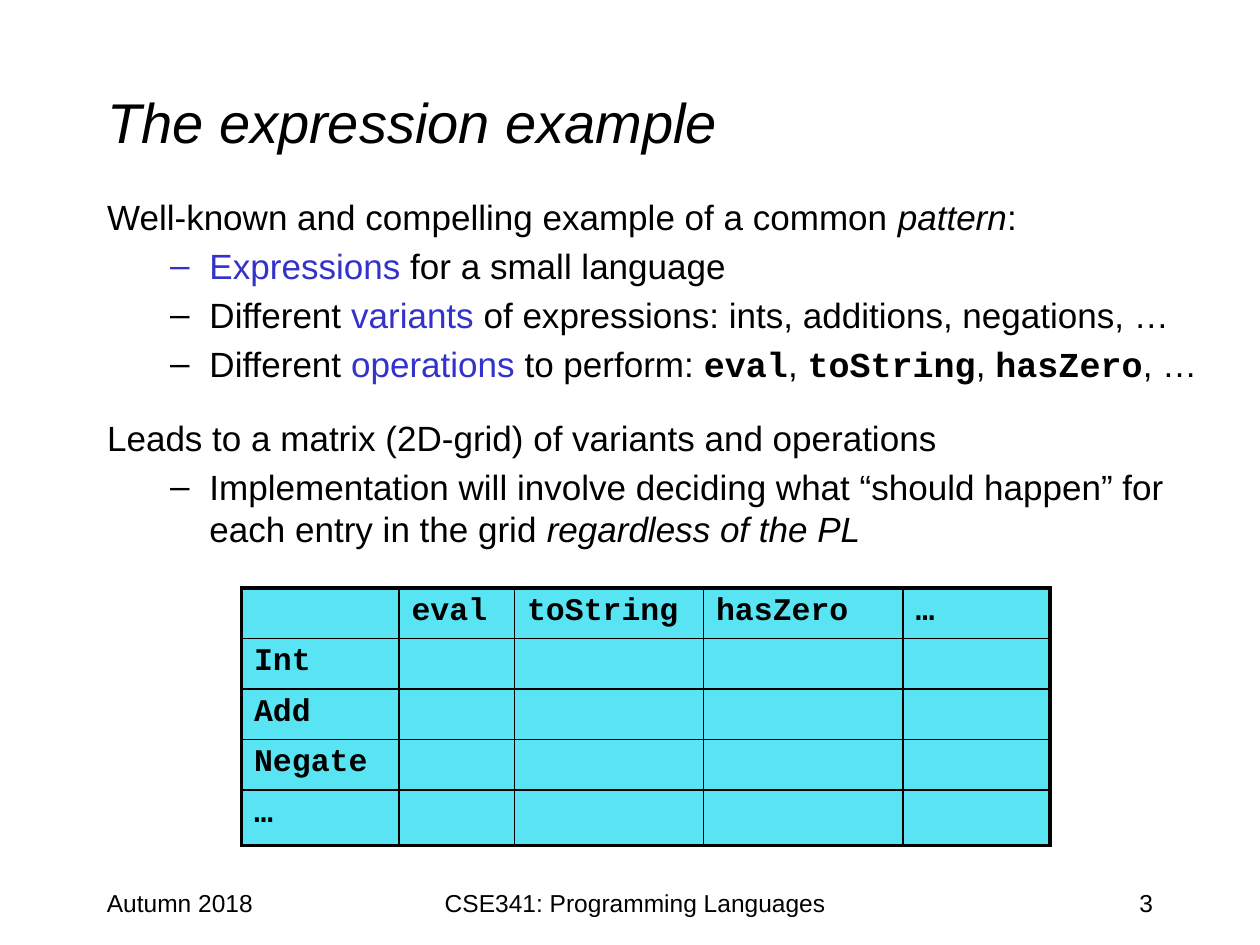
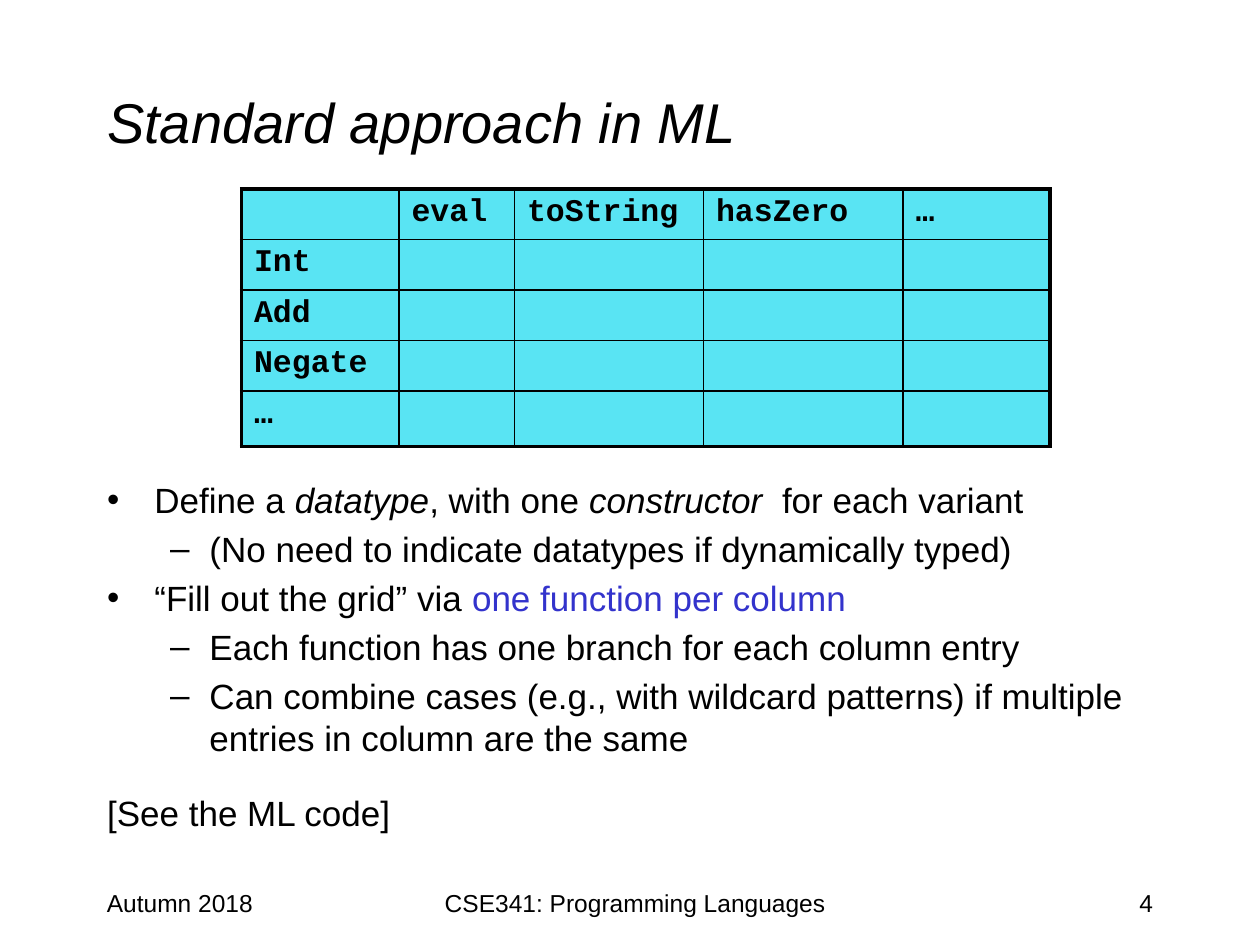
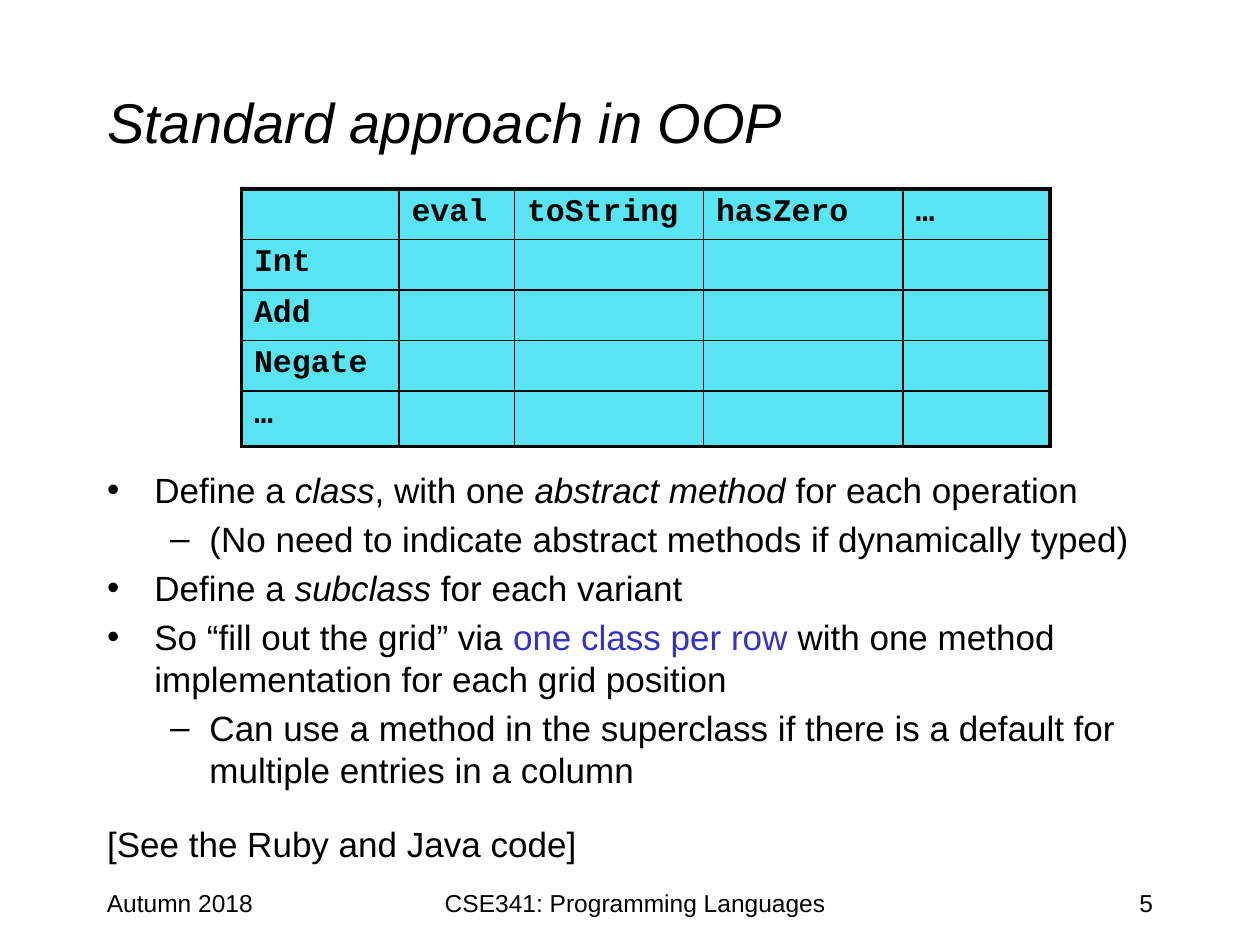
import pptx
import pptx.dml.color
import pptx.enum.text
import pptx.oxml.ns
import pptx.util
from lxml import etree

# Shared look
BLACK, BLUE, CYAN, WHITE = "000000", "3333CC", "59E4F3", "FFFFFF"
SANS, MONO = "Arial", "Courier New"
ALIGN = pptx.enum.text.PP_ALIGN
UNIT = pptx.util.Inches(10) // 120  # the slide is a grid of 120 by 90 units

# Run styles
PLAIN = {}
ITALIC = {"italic": True}
KEY = {"color": BLUE}
CODE = {"name": MONO, "bold": True}

# Paragraph kinds: (outline level, has bullet, space before in points)
LEAD = (0, False, None)
LEAD_AFTER_GAP = (0, False, 18.5)
POINT = (0, True, None)
DETAIL = (1, True, None)

# Matrix of variants and operations
OPERATIONS = ["eval", "toString", "hasZero", "…"]
VARIANTS = ["Int", "Add", "Negate", "…"]
MATRIX_COLUMNS = [15, 11, 18, 19, 14]
MATRIX_ROWS = [4.62] * 4 + [5.3]


def grid(*cells):
    return [round(cell * UNIT) for cell in cells]


def rgb(code):
    return pptx.dml.color.RGBColor.from_string(code)


def style_font(font, size=None, name=None, color=None, bold=None, italic=None):
    if size:
        font.size = pptx.util.Pt(size)
    if name:
        font.name = name
    if color:
        font.color.rgb = rgb(color)
    if bold is not None:
        font.bold = bold
    if italic is not None:
        font.italic = italic


def place(shape, box):
    shape.left, shape.top, shape.width, shape.height = grid(*box)


def add_title(slide, text):
    title = slide.shapes.title
    place(title, (9, 4, 102, 15))
    title.text_frame.text = text
    heading = title.text_frame.paragraphs[0]
    heading.alignment = ALIGN.LEFT
    style_font(heading.font, 32, SANS, BLACK, italic=True)


def add_body(slide, box, paragraphs):
    body = slide.placeholders[1]
    place(body, box)
    frame = body.text_frame
    frame.auto_size = pptx.enum.text.MSO_AUTO_SIZE.NONE
    for index, ((level, bullet, gap), *runs) in enumerate(paragraphs):
        paragraph = frame.add_paragraph() if index else frame.paragraphs[0]
        paragraph.level = level
        if gap:
            paragraph.space_before = pptx.util.Pt(gap)
        if not bullet:
            properties = paragraph._p.get_or_add_pPr()
            properties.set("marL", "0")
            properties.set("indent", "0")
            etree.SubElement(properties, pptx.oxml.ns.qn("a:buNone"))
        style_font(paragraph.font, 20, SANS, BLACK)
        for text, style in runs:
            run = paragraph.add_run()
            run.text = text
            style_font(run.font, **style)


def add_footer(slide, number):
    for text, left, width, alignment in (
        ("Autumn 2018", 9, 25, ALIGN.LEFT),
        ("CSE341: Programming Languages", 38, 45, ALIGN.CENTER),
        (str(number), 86, 25, ALIGN.RIGHT),
    ):
        footer = slide.shapes.add_textbox(*grid(left, 84, width, 6)).text_frame
        footer.word_wrap = True
        footer.text = text
        footer.paragraphs[0].alignment = alignment
        style_font(footer.paragraphs[0].font, 14, SANS, BLACK)


def add_border(cell, side, width):
    line = etree.SubElement(cell._tc.get_or_add_tcPr(), pptx.oxml.ns.qn(f"a:ln{side}"),
                            w=str(pptx.util.Pt(width)))
    fill = etree.SubElement(line, pptx.oxml.ns.qn("a:solidFill"))
    etree.SubElement(fill, pptx.oxml.ns.qn("a:srgbClr"), val=BLACK)


def add_matrix(slide, top):
    last_row, last_column = len(MATRIX_ROWS) - 1, len(MATRIX_COLUMNS) - 1
    matrix = slide.shapes.add_table(
        last_row + 1, last_column + 1,
        *grid(23, top, sum(MATRIX_COLUMNS), sum(MATRIX_ROWS))).table
    for column, width in zip(matrix.columns, grid(*MATRIX_COLUMNS)):
        column.width = width
    for row, height in zip(matrix.rows, grid(*MATRIX_ROWS)):
        row.height = height
    labels = [["", *OPERATIONS]] + [[variant] + [""] * last_column for variant in VARIANTS]
    for r, row_labels in enumerate(labels):
        for c, label in enumerate(row_labels):
            cell = matrix.cell(r, c)
            outer_sides = {"L": c == 0, "R": c == last_column,
                           "T": r == 0, "B": r == last_row}
            for side, outer in outer_sides.items():
                add_border(cell, side, 2.25 if outer else 1)
            cell.fill.solid()
            cell.fill.fore_color.rgb = rgb(CYAN)
            cell.text = label
            style_font(cell.text_frame.paragraphs[0].font, 18, MONO, BLACK, bold=True)


def add_slide(deck, number, title, matrix_top, body_box, paragraphs):
    slide = deck.slides.add_slide(deck.slide_layouts[1])
    add_title(slide, title)
    add_body(slide, body_box, paragraphs)
    add_footer(slide, number)
    add_matrix(slide, matrix_top)


def main():
    deck = pptx.Presentation()
    deck.slide_width, deck.slide_height = grid(120, 90)
    background = deck.slide_master.background.fill
    background.solid()
    background.fore_color.rgb = rgb(WHITE)

    add_slide(deck, 3, "The expression example", 56, (9, 18, 108, 37), [
        (LEAD, ("Well-known and compelling example of a common ", PLAIN),
         ("pattern", ITALIC), (":", PLAIN)),
        (DETAIL, ("Expressions", KEY), (" for a small language", PLAIN)),
        (DETAIL, ("Different ", PLAIN), ("variants", KEY),
         (" of expressions: ints, additions, negations, …", PLAIN)),
        (DETAIL, ("Different ", PLAIN), ("operations", KEY), (" to perform: ", PLAIN),
         ("eval", CODE), (", ", PLAIN), ("toString", CODE), (", ", PLAIN),
         ("hasZero", CODE), (", …", PLAIN)),
        (LEAD_AFTER_GAP, ("Leads to a matrix (2D-grid) of variants and operations", PLAIN)),
        (DETAIL, ("Implementation will involve deciding what “should happen” for "
                  "each entry in the grid ", PLAIN), ("regardless of the PL", ITALIC)),
    ])

    add_slide(deck, 4, "Standard approach in ML", 18, (9, 45, 102, 35), [
        (POINT, ("Define a ", PLAIN), ("datatype", ITALIC), (", with one ", PLAIN),
         ("constructor", ITALIC), ("  for each variant", PLAIN)),
        (DETAIL, ("(No need to indicate datatypes if dynamically typed)", PLAIN)),
        (POINT, ("“Fill out the grid” via ", PLAIN), ("one function per column", KEY)),
        (DETAIL, ("Each function has one branch for each column entry", PLAIN)),
        (DETAIL, ("Can combine cases (e.g., with wildcard patterns) if multiple "
                  "entries in column are the same", PLAIN)),
        (LEAD_AFTER_GAP, ("[See the ML code]", PLAIN)),
    ])

    add_slide(deck, 5, "Standard approach in OOP", 18, (9, 44, 102, 35), [
        (POINT, ("Define a ", PLAIN), ("class", ITALIC), (", with one ", PLAIN),
         ("abstract method", ITALIC), (" for each operation", PLAIN)),
        (DETAIL, ("(No need to indicate abstract methods if dynamically typed)", PLAIN)),
        (POINT, ("Define a ", PLAIN), ("subclass", ITALIC), (" for each variant", PLAIN)),
        (POINT, ("So “fill out the grid” via ", PLAIN), ("one class per row", KEY),
         (" with one method implementation for each grid position", PLAIN)),
        (DETAIL, ("Can use a method in the superclass if there is a default for "
                  "multiple entries in a column", PLAIN)),
        (LEAD_AFTER_GAP, ("[See the Ruby and Java code]", PLAIN)),
    ])

    deck.save("out.pptx")


if __name__ == "__main__":
    main()
